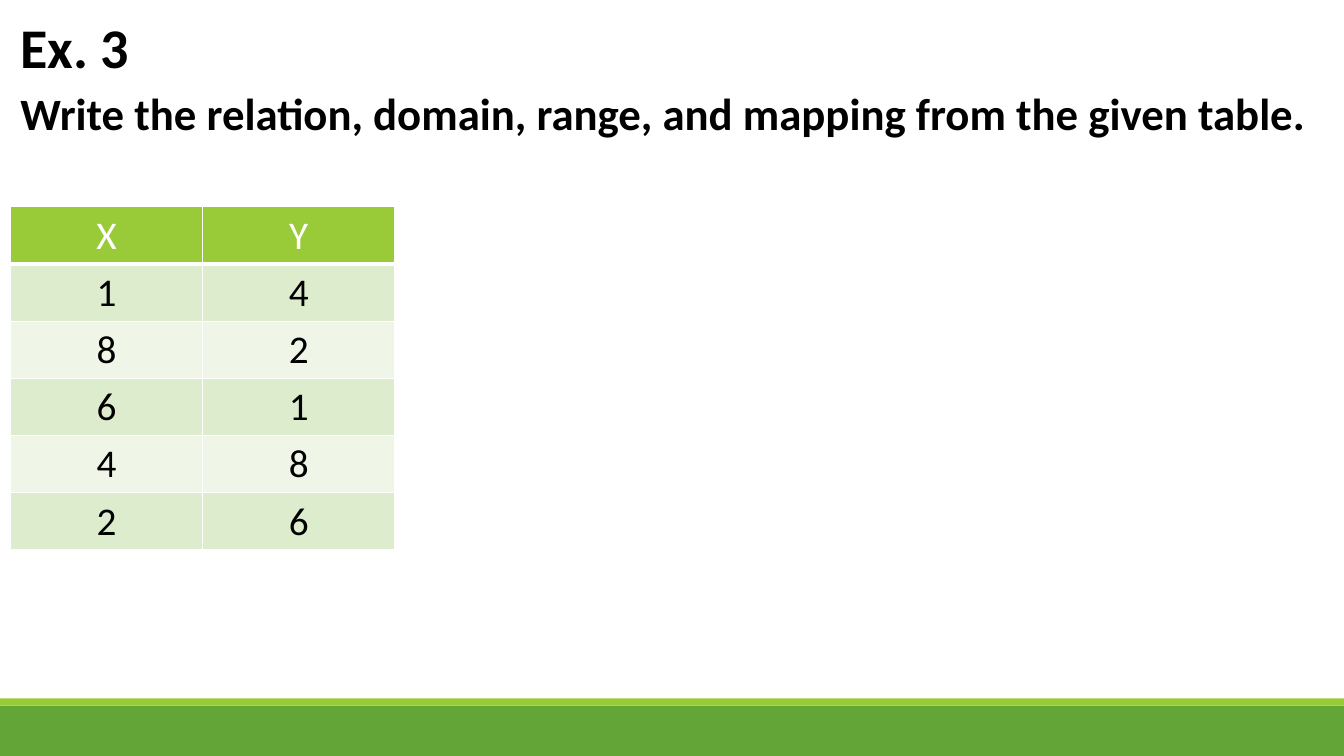
import dataclasses

import lxml.etree
import pptx
import pptx.dml.color
import pptx.enum.shapes
import pptx.enum.text
import pptx.oxml.ns
import pptx.slide
import pptx.table
import pptx.text.text
import pptx.util

PX = 9525  # EMU in one px, 96 px to the inch


@dataclasses.dataclass(frozen=True)
class Theme:
    font: str = "Calibri"
    ink: str = "000000"
    paper: str = "FFFFFF"
    green: str = "63A537"
    lime: str = "99CB38"
    bands: tuple[str, str] = ("DEECCE", "EFF6E8")
    title: int = 40
    task: int = 32
    cell: int = 28
    rule: int = 1
    heavy: int = 3


@dataclasses.dataclass(frozen=True)
class Box:
    left: int
    top: int
    width: int
    height: int

    def emu(self) -> list[pptx.util.Emu]:
        return [pptx.util.Emu(n * PX) for n in dataclasses.astuple(self)]


@dataclasses.dataclass(frozen=True)
class Bar:
    box: Box
    fill: str


@dataclasses.dataclass(frozen=True)
class Label:
    box: Box
    text: str
    size: int


THEME = Theme()
WIDE, HIGH = 1280, 720
BARS = [
    Bar(Box(0, 672, WIDE, 48), THEME.green),
    Bar(Box(0, 665, WIDE, 7), THEME.lime),
]
LABELS = [
    Label(Box(10, 7, 131, 74), "Ex. 3", THEME.title),
    Label(
        Box(10, 77, 1260, 61),
        "Write the relation, domain, range, and mapping from the given table.",
        THEME.task,
    ),
]
GRID = Box(10, 197, 366, 324)
ROWS = [("X", "Y"), ("1", "4"), ("8", "2"), ("6", "1"), ("4", "8"), ("2", "6")]


def rgb(code: str) -> pptx.dml.color.RGBColor:
    return pptx.dml.color.RGBColor.from_string(code)


def style(
    para: pptx.text.text._Paragraph, size: int, ink: str, bold: bool
) -> None:
    font = para.font
    font.name = THEME.font
    font.size = pptx.util.Pt(size)
    font.bold = bold
    font.color.rgb = rgb(ink)


def draw_bar(slide: pptx.slide.Slide, bar: Bar) -> None:
    kind = pptx.enum.shapes.MSO_SHAPE.RECTANGLE
    shape = slide.shapes.add_shape(kind, *bar.box.emu())
    shape.shadow.inherit = False
    shape.fill.solid()
    shape.fill.fore_color.rgb = rgb(bar.fill)
    shape.line.fill.background()


def draw_label(slide: pptx.slide.Slide, label: Label) -> None:
    frame = slide.shapes.add_textbox(*label.box.emu()).text_frame
    frame.word_wrap = True
    frame.auto_size = pptx.enum.text.MSO_AUTO_SIZE.SHAPE_TO_FIT_TEXT
    para = frame.paragraphs[0]
    para.text = label.text
    style(para, label.size, THEME.ink, True)


def edge(cell: pptx.table._Cell, foot: int) -> None:
    """Rule all four sides; foot is the weight of the bottom one."""
    qn = pptx.oxml.ns.qn
    props = cell._tc.get_or_add_tcPr()
    sides = {"L": THEME.rule, "R": THEME.rule, "T": THEME.rule, "B": foot}
    for at, (side, weight) in enumerate(sides.items()):
        line = lxml.etree.Element(qn(f"a:ln{side}"), w=str(pptx.util.Pt(weight)))
        fill = lxml.etree.SubElement(line, qn("a:solidFill"))
        lxml.etree.SubElement(fill, qn("a:srgbClr"), val=THEME.paper)
        props.insert(at, line)


def draw_table(
    slide: pptx.slide.Slide, box: Box, rows: list[tuple[str, str]]
) -> None:
    frame = slide.shapes.add_table(len(rows), len(rows[0]), *box.emu())
    for i, row in enumerate(rows):
        head = i == 0
        for j, text in enumerate(row):
            cell = frame.table.cell(i, j)
            cell.fill.solid()
            cell.fill.fore_color.rgb = rgb(
                THEME.lime if head else THEME.bands[(i - 1) % 2]
            )
            edge(cell, THEME.heavy if head else THEME.rule)
            para = cell.text_frame.paragraphs[0]
            para.text = text
            para.alignment = pptx.enum.text.PP_ALIGN.CENTER
            style(para, THEME.cell, THEME.paper if head else THEME.ink, False)


def main() -> None:
    deck = pptx.Presentation()
    deck.slide_width = pptx.util.Emu(WIDE * PX)
    deck.slide_height = pptx.util.Emu(HIGH * PX)
    slide = deck.slides.add_slide(deck.slide_layouts[6])

    # Footer bars
    for bar in BARS:
        draw_bar(slide, bar)

    # Heading and task
    for label in LABELS:
        draw_label(slide, label)

    # Table of values
    draw_table(slide, GRID, ROWS)

    deck.save("out.pptx")


if __name__ == "__main__":
    main()
